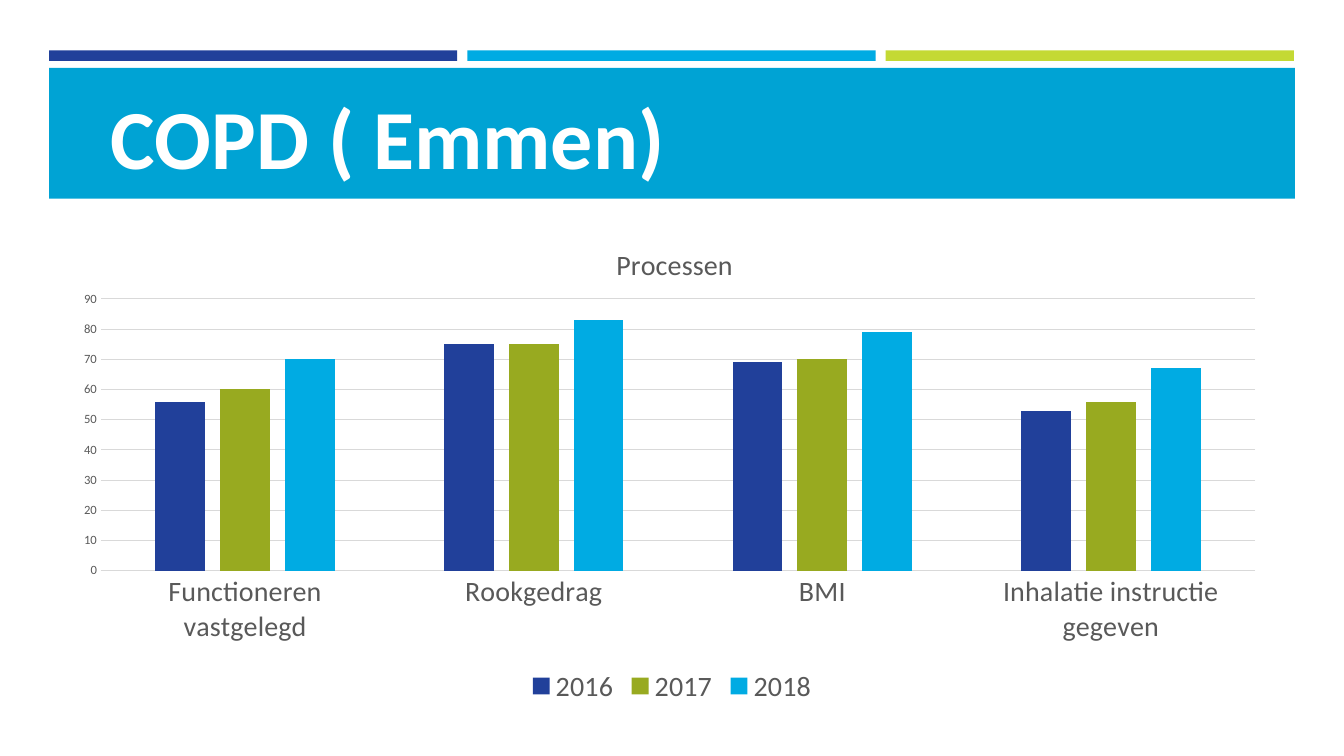
from lxml import etree
from pptx import Presentation
from pptx import util as u
from pptx.chart import data as chart_data
from pptx.dml import color
from pptx.enum import chart as chart_enum, shapes, text
from pptx.oxml import ns

COLORS = {
    "navy": "21409A", "cyan": "00ABE3", "lime": "C4D934", "band": "00A3D4",
    "olive": "98AA20", "white": "FFFFFF", "gray": "595959", "grid": "D9D9D9",
}
FONT = "Calibri"


def style_font(font, size, color_name, bold=False):
    font.name, font.size, font.bold = FONT, u.Pt(size), bold
    font.color.rgb = color.RGBColor.from_string(COLORS[color_name])


def place(parent, **settings):
    """Give a chart part a manual layout, in fractions of the chart area."""
    layout = parent.find(ns.qn("c:layout"))
    if layout is None:
        layout = etree.Element(ns.qn("c:layout"))
        parent.insert(0, layout)
    manual = etree.SubElement(layout, ns.qn("c:manualLayout"))
    for name, value in settings.items():
        etree.SubElement(manual, ns.qn(f"c:{name}")).set("val", str(value))


deck = Presentation()
deck.slide_width, deck.slide_height = u.Pt(960), u.Pt(540)
page = deck.slides.add_slide(deck.slide_layouts[5])

# Three accent bars above the title band
bars = [(35 + 298.8 * i, 36, 291.6, 7.5, name)
        for i, name in enumerate(["navy", "cyan", "lime"])]
for left, top, width, height, name in bars + [(35, 48.5, 890, 93.5, "band")]:
    bar = page.shapes.add_shape(shapes.MSO_SHAPE.RECTANGLE, u.Pt(left), u.Pt(top),
                                u.Pt(width), u.Pt(height))
    bar.shadow.inherit = False
    bar.fill.solid()
    bar.fill.fore_color.rgb = color.RGBColor.from_string(COLORS[name])
    bar.line.fill.background()

# Title, brought in front of the band
title = page.shapes.title
title.element.getparent().append(title.element)
title.left, title.top, title.width, title.height = u.Pt(72), u.Pt(57), u.Pt(816), u.Pt(80)
frame = title.text_frame
frame.word_wrap = True
frame.auto_size = text.MSO_AUTO_SIZE.NONE
frame.vertical_anchor = text.MSO_ANCHOR.MIDDLE
para = frame.paragraphs[0]
para.alignment = text.PP_ALIGN.LEFT
span = para.add_run()
span.text = "COPD ( Emmen)"
style_font(span.font, 60, "white", bold=True)

# Chart
series_rows = [
    ("2016", [56, 75, 69, 53], "navy"),
    ("2017", [60, 75, 70, 56], "olive"),
    ("2018", [70, 83, 79, 67], "cyan"),
]
numbers = chart_data.CategoryChartData()
numbers.categories = ["Functioneren vastgelegd", "Rookgedrag", "BMI",
                      "Inhalatie instructie gegeven"]
for name, values, _ in series_rows:
    numbers.add_series(name, values)
chart = page.shapes.add_chart(chart_enum.XL_CHART_TYPE.COLUMN_CLUSTERED, u.Pt(46), u.Pt(153.5),
                              u.Pt(868), u.Pt(353), numbers).chart
style_font(chart.font, 10, "gray")

chart.has_title = True
heading = chart.chart_title.text_frame.paragraphs[0].add_run()
heading.text = "Processen"
style_font(heading.font, 20, "gray")

chart.has_legend = True
chart.legend.position = chart_enum.XL_LEGEND_POSITION.BOTTOM
chart.legend.include_in_layout = False
style_font(chart.legend.font, 20, "gray")

plot = chart.plots[0]
plot.gap_width, plot.overlap = 219, -30
plot.vary_by_categories = False
for series, (_, _, name) in zip(plot.series, series_rows):
    series.format.fill.solid()
    series.format.fill.fore_color.rgb = color.RGBColor.from_string(COLORS[name])

value_axis, category_axis = chart.value_axis, chart.category_axis
for axis, size in [(value_axis, 9), (category_axis, 20)]:
    axis.major_tick_mark = axis.minor_tick_mark = chart_enum.XL_TICK_MARK.NONE
    style_font(axis.tick_labels.font, size, "gray")
value_axis.minimum_scale, value_axis.maximum_scale, value_axis.major_unit = 0, 90, 10
value_axis.format.line.fill.background()
for line in [category_axis.format.line, value_axis.major_gridlines.format.line]:
    line.width = u.Pt(0.75)
    line.color.rgb = color.RGBColor.from_string(COLORS["grid"])

place(chart.chart_title.format.fill and chart.element.find(".//" + ns.qn("c:title")),
      xMode="edge", yMode="edge", x=0.45, y=0.05)
place(chart.element.find(".//" + ns.qn("c:plotArea")), layoutTarget="inner",
      xMode="edge", yMode="edge", x=0.03, y=0.17, w=0.95, h=0.55)

deck.save("out.pptx")
